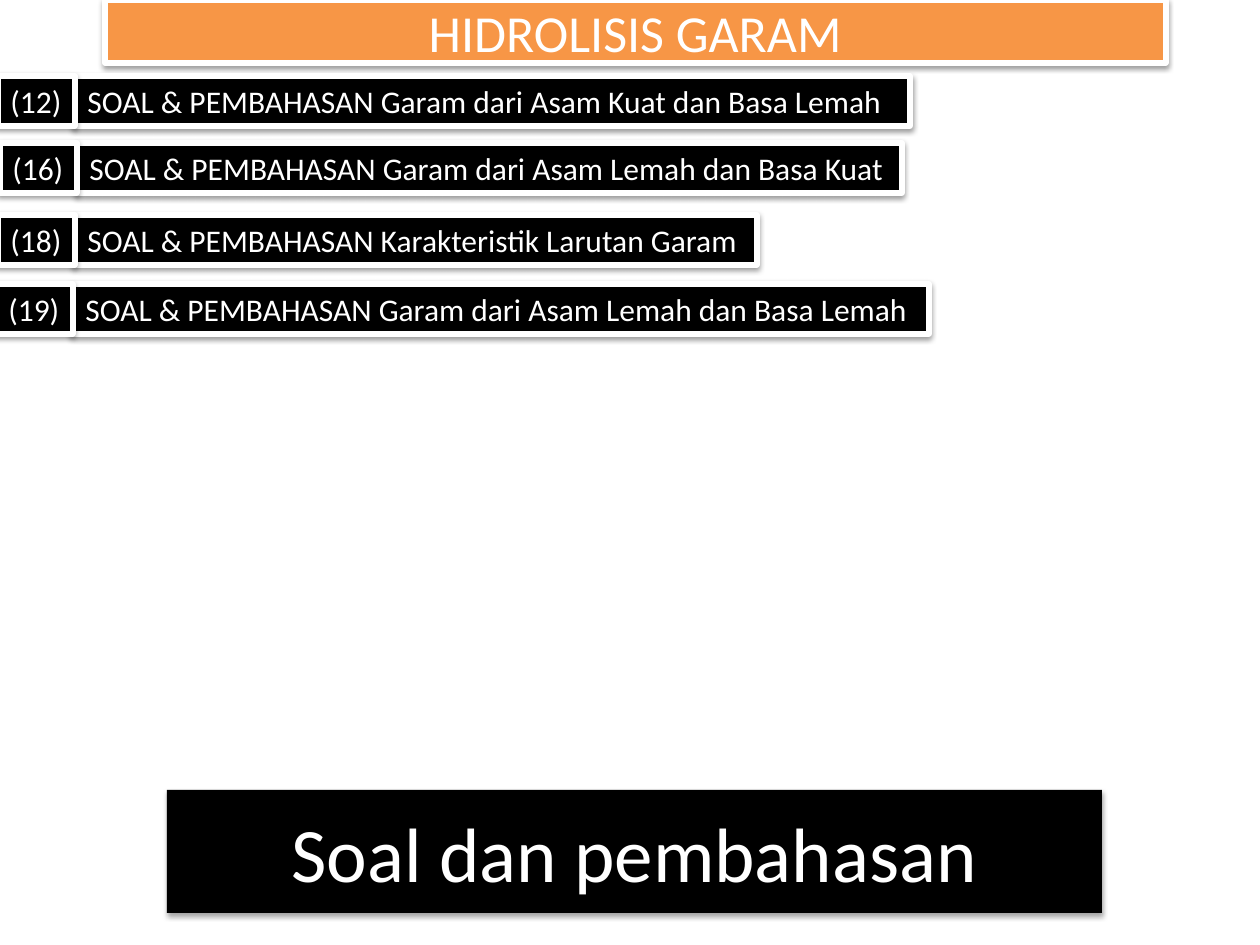
from dataclasses import dataclass
from typing import Optional

from lxml.etree import SubElement
from pptx import Presentation
from pptx.dml.color import RGBColor
from pptx.enum.shapes import MSO_SHAPE as Preset
from pptx.enum.text import MSO_ANCHOR as Anchor, MSO_AUTO_SIZE as AutoSize, PP_ALIGN as Align
from pptx.oxml.ns import qn
from pptx.util import Emu, Pt

PX_PER_INCH = 126
EMU_PER_INCH = 914400


@dataclass(frozen=True)
class Theme:
    font: str = "Calibri"
    orange: str = "F79646"
    black: str = "000000"
    white: str = "FFFFFF"
    heading_size: float = 29.7
    row_size: float = 18
    title_size: float = 44
    border: float = 3
    shadow_blur: float = 3.1


@dataclass(frozen=True)
class Panel:
    text: str
    left: int
    top: int
    width: int
    height: int
    fill: str
    size: float
    border: Optional[str] = None
    centred: bool = False
    shadow_alpha: int = 38
    shadow_distance: float = 1.6


@dataclass(frozen=True)
class Topic:
    number: int
    text: str
    left: int
    top: int
    width: int


THEME = Theme()
TAG_WIDTH = 77
ROW_HEIGHT = 50

HEADING = Panel("HIDROLISIS GARAM", 105, 0, 1061, 63, THEME.orange,
                THEME.heading_size, THEME.white, centred=True)
TITLE = Panel("Soal dan pembahasan", 167, 790, 935, 123, THEME.black,
              THEME.title_size, centred=True, shadow_alpha=35, shadow_distance=1.8)
TOPICS = [
    Topic(12, "Garam dari Asam Kuat dan Basa Lemah", -2, 76, 835),
    Topic(16, "Garam dari Asam Lemah dan Basa Kuat", 0, 143, 825),
    Topic(18, "Karakteristik Larutan Garam", -2, 215, 682),
    Topic(19, "Garam dari Asam Lemah dan Basa Lemah", -4, 284, 856),
]


def px(length: int) -> Emu:
    return Emu(round(length * EMU_PER_INCH / PX_PER_INCH))


def add_shadow(box, alpha: int, distance: float) -> None:
    box.shadow.inherit = False
    effects = box.element.spPr.find(qn("a:effectLst"))
    shadow = SubElement(effects, qn("a:outerShdw"), blurRad=str(Pt(THEME.shadow_blur)),
                        dist=str(Pt(distance)), dir="5400000", rotWithShape="0")
    color = SubElement(shadow, qn("a:srgbClr"), val=THEME.black)
    SubElement(color, qn("a:alpha"), val=str(alpha * 1000))


def draw_panel(page, panel: Panel) -> None:
    box = page.shapes.add_shape(Preset.RECTANGLE, px(panel.left), px(panel.top),
                                px(panel.width), px(panel.height))
    box.fill.solid()
    box.fill.fore_color.rgb = RGBColor.from_string(panel.fill)
    if panel.border:
        box.line.color.rgb = RGBColor.from_string(panel.border)
        box.line.width = Pt(THEME.border)
    else:
        box.line.fill.background()
    add_shadow(box, panel.shadow_alpha, panel.shadow_distance)

    # Centred panels keep their size; the others fit their single line
    frame = box.text_frame
    frame.word_wrap = panel.centred
    frame.auto_size = AutoSize.NONE if panel.centred else AutoSize.SHAPE_TO_FIT_TEXT
    frame.vertical_anchor = Anchor.MIDDLE if panel.centred else Anchor.TOP
    para = frame.paragraphs[0]
    para.alignment = Align.CENTER if panel.centred else Align.LEFT
    span = para.add_run()
    span.text = panel.text
    span.font.name = THEME.font
    span.font.size = Pt(panel.size)
    span.font.color.rgb = RGBColor.from_string(THEME.white)


def draw_topic(page, topic: Topic) -> None:
    label = (f"SOAL & PEMBAHASAN {topic.text}", topic.left + TAG_WIDTH, topic.width)
    tag = (f"({topic.number})", topic.left, TAG_WIDTH)
    for text, left, width in (label, tag):
        draw_panel(page, Panel(text, left, topic.top, width, ROW_HEIGHT,
                               THEME.black, THEME.row_size, THEME.white))


def main() -> None:
    deck = Presentation()
    deck.slide_width, deck.slide_height = px(1260), px(945)
    page = deck.slides.add_slide(deck.slide_layouts[6])

    # Heading bar
    draw_panel(page, HEADING)
    # Numbered topics
    for topic in TOPICS:
        draw_topic(page, topic)
    # Title block
    draw_panel(page, TITLE)

    deck.save("out.pptx")


if __name__ == "__main__":
    main()
